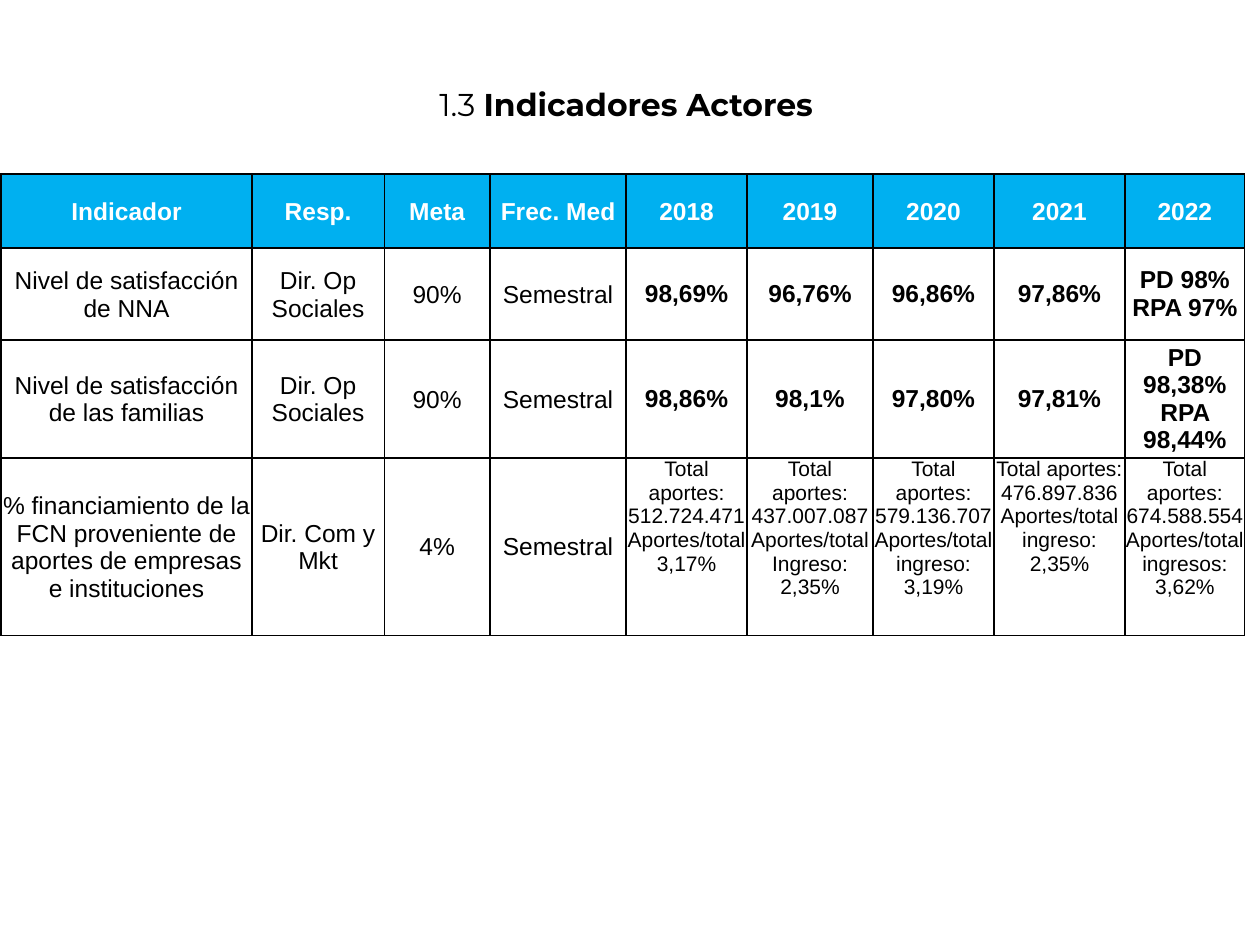
from typing import NamedTuple

from lxml import etree
from pptx import Presentation
from pptx.dml.color import RGBColor
from pptx.enum.text import MSO_ANCHOR, PP_ALIGN
from pptx.oxml.ns import qn
from pptx.util import Inches, Pt

CENTER = PP_ALIGN.CENTER
MIDDLE, TOP = MSO_ANCHOR.MIDDLE, MSO_ANCHOR.TOP

COLORS = {"header": "00B0F0", "white": "FFFFFF", "black": "000000"}


class CellStyle(NamedTuple):
    fill: str = "white"
    color: str = "black"
    size: int = 14
    bold: bool = False
    anchor: MSO_ANCHOR = MIDDLE
    inset: float = 0.01


HEADER = CellStyle(fill="header", color="white", bold=True)
LABEL = CellStyle()
RESULT = CellStyle(bold=True, inset=0)
FUNDING = CellStyle(size=12, anchor=TOP, inset=0)


class Row(NamedTuple):
    height: float
    labels: list[str]
    years: list[str]
    label_style: CellStyle
    year_style: CellStyle


COLUMN_WIDTHS = [1.99, 1.05, 0.84, 1.08, 0.96, 1, 0.96, 1.04, 0.95]
ROWS = [
    Row(0.59, ["Indicador", "Resp.", "Meta", "Frec. Med"],
        ["2018", "2019", "2020", "2021", "2022"], HEADER, HEADER),
    Row(0.73, ["Nivel de satisfacción de NNA", "Dir. Op Sociales", "90%", "Semestral"],
        ["98,69%", "96,76%", "96,86%", "97,86%", "PD 98%\nRPA 97%"], LABEL, RESULT),
    Row(0.82, ["Nivel de satisfacción de las familias", "Dir. Op Sociales", "90%", "Semestral"],
        ["98,86%", "98,1%", "97,80%", "97,81%", "PD 98,38%\nRPA 98,44%"], LABEL, RESULT),
    Row(1.41, ["% financiamiento de la FCN proveniente de aportes de empresas e instituciones",
               "Dir. Com y Mkt", "4%", "Semestral"],
        ["Total aportes: 512.724.471\nAportes/total \n3,17%",
         "Total aportes: 437.007.087\nAportes/total Ingreso: 2,35%",
         "Total aportes: 579.136.707\nAportes/total ingreso: 3,19%",
         "Total aportes: 476.897.836\nAportes/total ingreso: 2,35%",
         "Total aportes: 674.588.554\nAportes/total ingresos: 3,62%"], LABEL, FUNDING),
]


def rgb(name: str) -> RGBColor:
    return RGBColor.from_string(COLORS[name])


def add_run(p, text: str, font: str, size: int, color: str, bold: bool = False) -> None:
    r = p.add_run()
    r.text = text
    r.font.name = font
    r.font.size = Pt(size)
    r.font.bold = bold
    r.font.color.rgb = rgb(color)


def set_borders(cell) -> None:
    """Put a 1 pt black line on all four sides; the lines must precede the fill."""
    tc_pr = cell._tc.get_or_add_tcPr()
    for i, side in enumerate(("a:lnL", "a:lnR", "a:lnT", "a:lnB")):
        ln = etree.Element(qn(side), w=str(Pt(1)))
        fill = etree.SubElement(ln, qn("a:solidFill"))
        etree.SubElement(fill, qn("a:srgbClr"), val=COLORS["black"])
        tc_pr.insert(i, ln)


def fill_cell(cell, text: str, style: CellStyle) -> None:
    cell.fill.solid()
    cell.fill.fore_color.rgb = rgb(style.fill)
    cell.vertical_anchor = style.anchor
    cell.margin_left = cell.margin_right = cell.margin_top = Inches(style.inset)
    cell.margin_bottom = 0
    tf = cell.text_frame
    for i, line in enumerate(text.split("\n")):
        p = tf.add_paragraph() if i else tf.paragraphs[0]
        p.alignment = CENTER
        add_run(p, line, "Arial", style.size, style.color, style.bold)
    set_borders(cell)


def add_title(s) -> None:
    tf = s.shapes.add_textbox(Inches(0.88), Inches(0.42), Inches(8.11), Inches(0.81)).text_frame
    tf.word_wrap = True
    tf.vertical_anchor = MIDDLE
    p = tf.paragraphs[0]
    p.alignment = CENTER
    add_run(p, " ", "Arial", 18, "black")
    add_run(p, "1.3 ", "Montserrat", 18, "black")
    add_run(p, "Indicadores Actores", "Montserrat", 18, "black", bold=True)


def add_indicator_table(s) -> None:
    table = s.shapes.add_table(
        len(ROWS), len(COLUMN_WIDTHS), Inches(0.01), Inches(1.38),
        Inches(sum(COLUMN_WIDTHS)), Inches(sum(row.height for row in ROWS))).table
    table.horz_banding = False
    for column, width in zip(table.columns, COLUMN_WIDTHS):
        column.width = Inches(width)
    for i, row in enumerate(ROWS):
        table.rows[i].height = Inches(row.height)
        for j, text in enumerate(row.labels + row.years):
            style = row.label_style if j < len(row.labels) else row.year_style
            fill_cell(table.cell(i, j), text, style)


def main() -> None:
    prs = Presentation()
    prs.slide_width, prs.slide_height = Inches(10), Inches(7.5)
    s = prs.slides.add_slide(prs.slide_layouts[6])
    add_title(s)
    add_indicator_table(s)
    prs.save("out.pptx")


if __name__ == "__main__":
    main()
